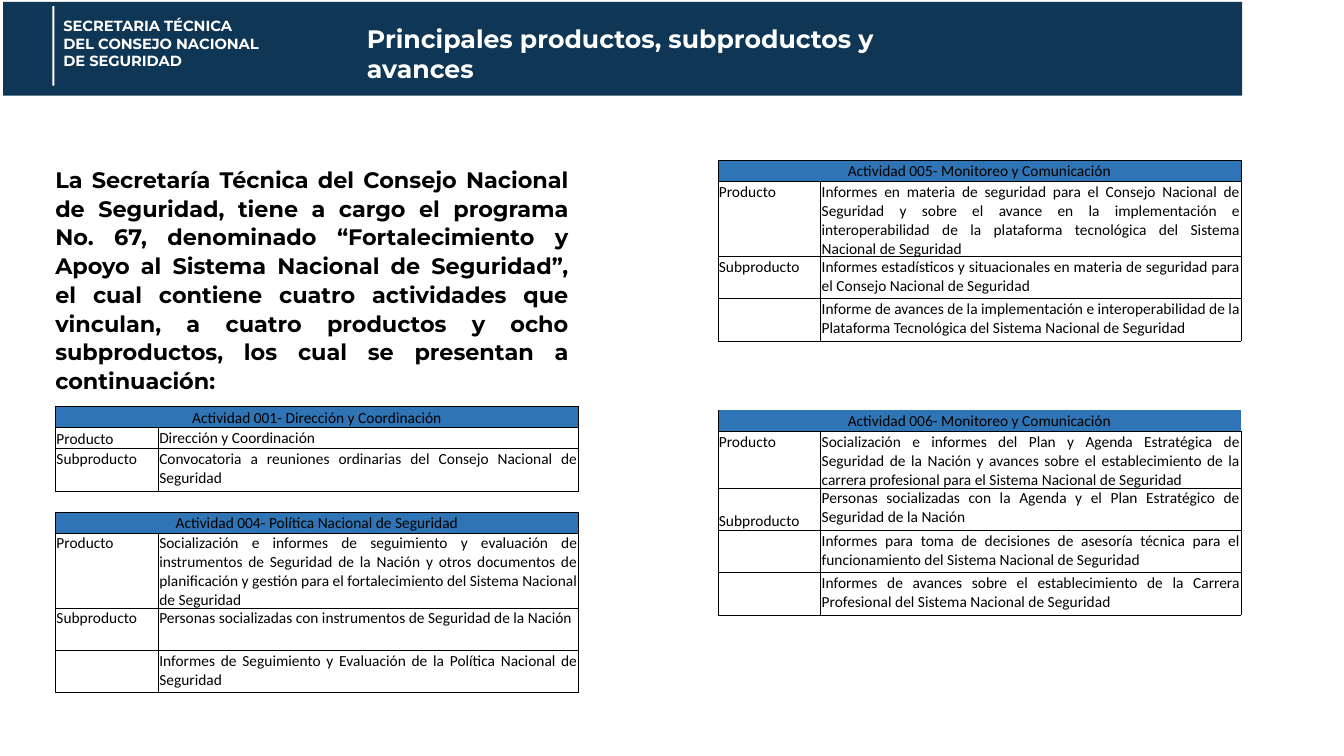
from dataclasses import dataclass

from lxml.etree import SubElement
from pptx import Presentation
from pptx.dml.color import RGBColor
from pptx.enum.shapes import MSO_SHAPE as Shape
from pptx.enum.text import MSO_ANCHOR as Anchor, PP_ALIGN as Align
from pptx.oxml.ns import qn
from pptx.util import Inches, Pt


@dataclass(frozen=True)
class Theme:
    navy: str = "0F3655"
    blue: str = "2F75B5"
    white: str = "FFFFFF"
    black: str = "000000"
    heading_font: str = "Montserrat"
    table_font: str = "Calibri"
    agency_size: float = 10.5
    title_size: float = 18
    intro_size: float = 16
    table_size: float = 11
    border: float = 0.5


class SlideBuilder:
    def __init__(self, slide, theme):
        self.slide = slide
        self.theme = theme

    def apply(self, target, values):
        for name, value in values.items():
            setattr(target, name, value)

    def rectangle(self, box, color):
        shape = self.slide.shapes.add_shape(Shape.RECTANGLE, *map(Inches, box))
        shape.shadow.inherit = False
        shape.fill.solid()
        shape.fill.fore_color.rgb = RGBColor.from_string(color)
        shape.line.fill.background()

    def fill_paragraph(self, paragraph, text, font, color, layout):
        self.apply(paragraph, layout)
        run = paragraph.add_run()
        run.text = text
        self.apply(run.font, font)
        run.font.color.rgb = RGBColor.from_string(color)

    def text(self, box, lines, size, color, **layout):
        frame = self.slide.shapes.add_textbox(*map(Inches, box)).text_frame
        frame.word_wrap = True
        font = {"name": self.theme.heading_font, "size": Pt(size), "bold": True}
        for index, line in enumerate(lines):
            paragraph = frame.add_paragraph() if index else frame.paragraphs[0]
            self.fill_paragraph(paragraph, line, font, color, layout)

    def borders(self, cell, sides):
        properties = cell._tc.get_or_add_tcPr()
        for side in "LRTB":
            line = SubElement(properties, qn(f"a:ln{side}"), w=str(Pt(self.theme.border)))
            if side in sides:
                fill = SubElement(line, qn("a:solidFill"))
                SubElement(fill, qn("a:srgbClr"), val=self.theme.black)
            else:
                SubElement(line, qn("a:noFill"))

    def cell(self, cell, text, sides, align, anchor, color=None):
        margin = Inches(0.01)
        self.apply(cell, {"margin_left": margin, "margin_right": margin, "margin_top": margin,
                          "margin_bottom": 0, "vertical_anchor": anchor})
        self.borders(cell, sides)
        if color:
            cell.fill.solid()
            cell.fill.fore_color.rgb = RGBColor.from_string(color)
        else:
            cell.fill.background()
        paragraph = cell.text_frame.paragraphs[0]
        if text:
            font = {"name": self.theme.table_font, "size": Pt(self.theme.table_size), "bold": False}
            self.fill_paragraph(paragraph, text, font, self.theme.black, {"alignment": align})
        else:
            SubElement(paragraph._p, qn("a:endParaRPr"), sz=str(int(self.theme.table_size * 100)))

    def table(self, left, top, columns, rows, low=(), header_sides="LRTB"):
        """A string is a heading row, a pair is label and value, None is a gap;
        low lists the rows whose first cell sits at the bottom."""
        heights = [height for height, _ in rows]
        frame = self.slide.shapes.add_table(len(rows), len(columns), Inches(left), Inches(top),
                                            Inches(sum(columns)), Inches(sum(heights)))
        table = frame.table
        self.apply(table, {"first_row": False, "horz_banding": False})
        for column, width in zip(table.columns, columns):
            column.width = Inches(width)
        last = len(columns) - 1
        for index, (height, content) in enumerate(rows):
            table.rows[index].height = Inches(height)
            heading = isinstance(content, str)
            texts = (content,) if heading else content or ()
            sides = header_sides if heading else "LRTB" if content else "TB"
            for position in range(last + 1):
                text = texts[position] if position < len(texts) else ""
                align = Align.CENTER if heading else Align.JUSTIFY if position else Align.LEFT
                anchor = Anchor.BOTTOM if index in low and not position else Anchor.TOP
                self.cell(table.cell(index, position), text, sides, align, anchor,
                          self.theme.blue if heading else None)
            start = 0 if heading else 1
            if content and start < last:
                table.cell(index, start).merge(table.cell(index, last))


ONE_LINE, TWO_LINES, THREE_LINES = 0.21, 0.42, 0.62
LABEL_WIDTH, VALUE_WIDTH = 1.02, 4.17
LEFT, RIGHT = 0.55, 7.12

INTRO = (
    "La Secretaría Técnica del Consejo Nacional de Seguridad, tiene a cargo el programa No. 67, "
    "denominado “Fortalecimiento y Apoyo al Sistema Nacional de Seguridad”, el cual contiene cuatro "
    "actividades que vinculan, a cuatro productos y ocho subproductos, los cual se presentan a "
    "continuación: "
)
DIRECTION_AND_POLICY = [
    (ONE_LINE, "Actividad 001- Dirección y Coordinación"),
    (ONE_LINE, ("Producto", "Dirección y Coordinación")),
    (TWO_LINES, ("Subproducto",
                 "Convocatoria a reuniones ordinarias del Consejo Nacional de Seguridad")),
    (ONE_LINE, None),
    (ONE_LINE, "Actividad 004- Política Nacional de Seguridad"),
    (THREE_LINES, ("Producto",
                   "Socialización e informes de seguimiento y evaluación de instrumentos de "
                   "Seguridad de la Nación y otros documentos de planificación y gestión para el "
                   "fortalecimiento del Sistema Nacional de Seguridad")),
    (TWO_LINES, ("Subproducto",
                 "Personas socializadas con instrumentos de Seguridad de la Nación")),
    (TWO_LINES, ("", "Informes de Seguimiento y Evaluación de la Política Nacional de Seguridad")),
]
AGENDA = [
    (ONE_LINE, "Actividad 006- Monitoreo y Comunicación"),
    (TWO_LINES, ("Producto",
                 "Socialización e informes del Plan y Agenda Estratégica de Seguridad de la Nación "
                 "y avances sobre el establecimiento de la carrera profesional para el Sistema "
                 "Nacional de Seguridad")),
    (TWO_LINES, ("Subproducto",
                 "Personas socializadas con la Agenda y el Plan Estratégico de Seguridad de la "
                 "Nación")),
    (TWO_LINES, ("", "Informes para toma de decisiones de asesoría técnica para el funcionamiento "
                     "del Sistema Nacional de Seguridad")),
    (TWO_LINES, ("", "Informes de avances sobre el establecimiento de la Carrera Profesional del "
                     "Sistema Nacional de Seguridad")),
]
MONITORING = [
    (ONE_LINE, "Actividad 005- Monitoreo y Comunicación"),
    (THREE_LINES, ("Producto",
                   "Informes en materia de seguridad para el Consejo Nacional de Seguridad y sobre "
                   "el avance en la implementación e interoperabilidad de la plataforma tecnológica "
                   "del Sistema Nacional de Seguridad")),
    (TWO_LINES, ("Subproducto",
                 "Informes estadísticos y situacionales en materia de seguridad para el Consejo "
                 "Nacional de Seguridad")),
    (TWO_LINES, ("", "Informe de avances de la implementación e interoperabilidad de la Plataforma "
                     "Tecnológica del Sistema Nacional de Seguridad")),
]


def main():
    presentation = Presentation()
    presentation.slide_width = Inches(13.33)
    presentation.slide_height = Inches(7.5)
    theme = Theme()
    builder = SlideBuilder(presentation.slides.add_slide(presentation.slide_layouts[6]), theme)

    # Header band
    builder.rectangle((0.03, 0.02, 12.29, 0.93), theme.navy)
    agency = ["SECRETARIA TÉCNICA", "DEL CONSEJO NACIONAL", "DE SEGURIDAD"]
    builder.text((0.53, 0.12, 3.77, 0.63), agency, theme.agency_size, theme.white)
    builder.rectangle((0.52, 0.06, 0.02, 0.79), theme.white)
    builder.text((3.54, 0.18, 6.08, 0.71), ["Principales productos, subproductos y avances"],
                 theme.title_size, theme.white)

    # Introduction
    builder.text((0.45, 1.58, 5.29, 2.4), [INTRO], theme.intro_size, theme.black,
                 alignment=Align.JUSTIFY, line_spacing=1.07, space_after=Pt(8))

    # Activity tables
    builder.table(LEFT, 4.03, [LABEL_WIDTH] + [VALUE_WIDTH / 5] * 5, DIRECTION_AND_POLICY,
                  low=(0, 1, 4))
    columns = [LABEL_WIDTH, VALUE_WIDTH]
    builder.table(RIGHT, 4.07, columns, AGENDA, low=(2,), header_sides="LB")
    builder.table(RIGHT, 1.59, columns, MONITORING)

    presentation.save("out.pptx")


if __name__ == "__main__":
    main()
